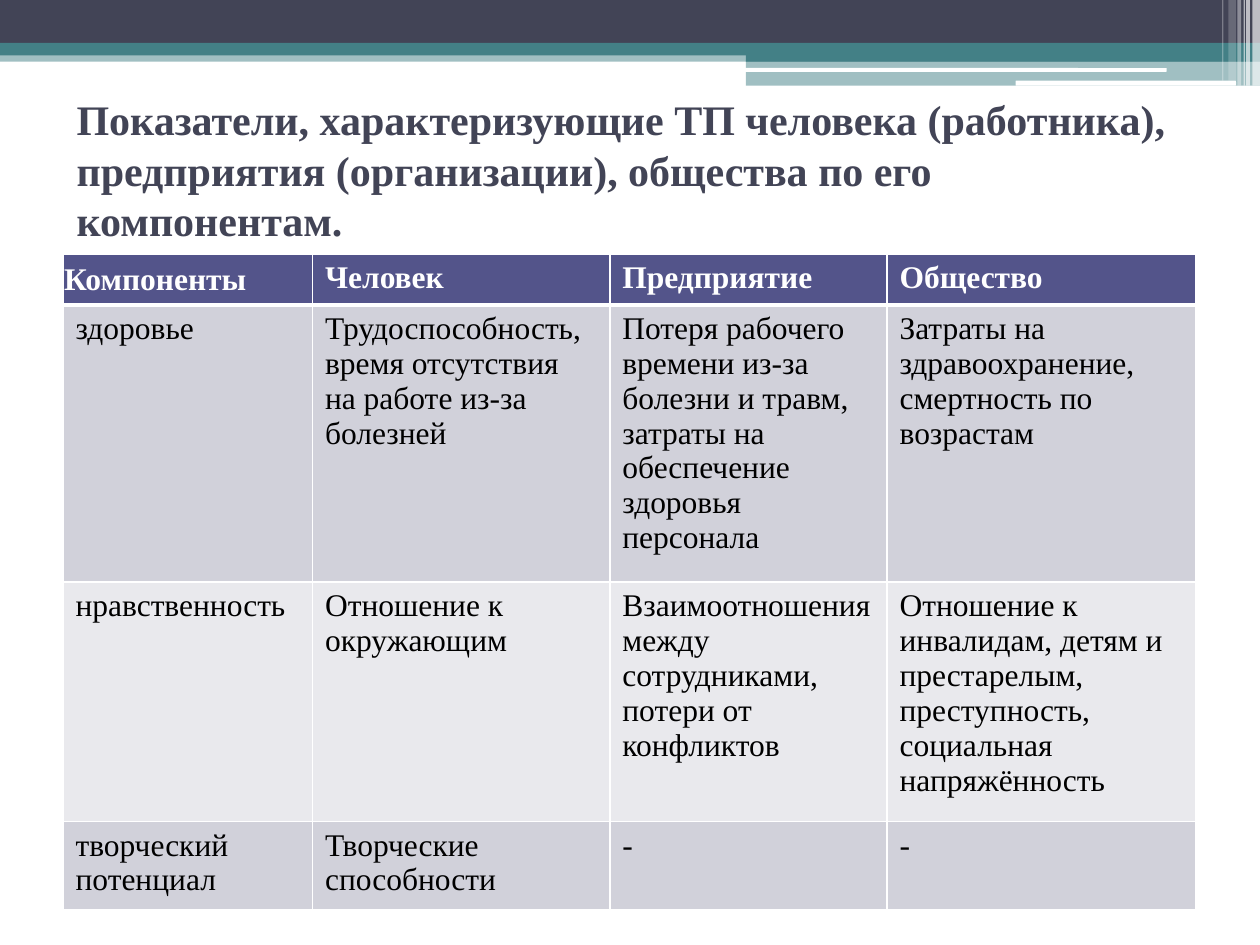
from lxml import etree
from pptx import Presentation
from pptx.dml.color import RGBColor
from pptx.enum.shapes import MSO_SHAPE
from pptx.enum.text import MSO_ANCHOR, PP_ALIGN
from pptx.oxml.ns import qn
from pptx.util import Inches, Pt

RECT, ROUND = MSO_SHAPE.RECTANGLE, MSO_SHAPE.ROUNDED_RECTANGLE
MIDDLE, JUSTIFY = MSO_ANCHOR.MIDDLE, PP_ALIGN.JUSTIFY
FONT = "Times New Roman"
DARK, TEAL, WHITE, BLACK, HEAD = "424456", "438086", "FFFFFF", "000000", "53548A"
BANDS = ["D1D1DA", "E9E9ED"]

TITLE = ("Показатели, характеризующие ТП человека (работника), "
         "предприятия (организации), общества по его компонентам.")
ROWS = [
    ["Компоненты", "Человек", "Предприятие", "Общество"],
    ["здоровье",
     "Трудоспособность, время отсутствия на работе из-за болезней",
     "Потеря рабочего времени из-за болезни и травм, затраты на обеспечение здоровья персонала",
     "Затраты на здравоохранение, смертность по возрастам"],
    ["нравственность",
     "Отношение к окружающим",
     "Взаимоотношения между сотрудниками, потери от конфликтов",
     "Отношение к инвалидам, детям и престарелым, преступность, социальная напряжённость"],
    ["творческий потенциал", "Творческие способности", "-", "-"],
]
COL_WIDTHS = [1.98, 2.36, 2.2, 2.45]
ROW_HEIGHTS = [0.37, 2.05, 1.81, 0.65]

BARS = [
    (RECT, 0, 0.4, 10, 0.09, TEAL, 50),
    (RECT, 0, 0, 10, 0.34, DARK, 100),
    (RECT, 0, 0.34, 10, 0.1, TEAL, 100),
    (RECT, 5.92, 0.39, 4.08, 0.1, TEAL, 100),
    (RECT, 5.92, 0.48, 4.08, 0.2, TEAL, 50),
    (ROUND, 5.91, 0.54, 3.35, 0.03, WHITE, 100),
    (ROUND, 8.06, 0.64, 1.75, 0.04, WHITE, 100),
]
STRIPES = [
    (9.94, 0.06, 0.68, 65),
    (9.89, 0.03, 0.68, 65),
    (9.87, 0.01, 0.68, 60),
    (9.82, 0.03, 0.68, 40),
    (9.75, 0.06, 0.64, 20),
    (9.7, 0.01, 0.64, 30),
]


def rgb(color):
    return RGBColor.from_string(color)


def add_bar(s, kind, x, y, w, h, color, opacity):
    sp = s.shapes.add_shape(kind, Inches(x), Inches(y), Inches(w), Inches(h))
    sp.shadow.inherit = False
    sp.line.fill.background()
    sp.fill.solid()
    sp.fill.fore_color.rgb = rgb(color)
    if opacity < 100:
        clr = sp.fill._xPr.find(qn("a:solidFill"))[0]
        etree.SubElement(clr, qn("a:alpha")).set("val", str(opacity * 1000))


def add_run(tf, text, size, color, bold):
    p = tf.paragraphs[0]
    r = p.add_run()
    r.text = text
    r.font.name = FONT
    r.font.size = Pt(size)
    r.font.bold = bold
    r.font.color.rgb = rgb(color)
    return p


def set_borders(cell, top, bottom):
    tc_pr = cell._tc.get_or_add_tcPr()
    sides = [("a:lnL", 1), ("a:lnR", 1), ("a:lnT", top), ("a:lnB", bottom)]
    for i, (tag, width) in enumerate(sides):
        ln = etree.Element(qn(tag), w=str(Pt(width)))
        fill = etree.SubElement(ln, qn("a:solidFill"))
        etree.SubElement(fill, qn("a:srgbClr")).set("val", WHITE)
        tc_pr.insert(i, ln)


def add_table(s):
    table = s.shapes.add_table(
        len(ROWS), len(COL_WIDTHS), Inches(0.5), Inches(2.02),
        Inches(sum(COL_WIDTHS)), Inches(sum(ROW_HEIGHTS))).table
    for col, width in zip(table.columns, COL_WIDTHS):
        col.width = Inches(width)
    for i, (texts, height) in enumerate(zip(ROWS, ROW_HEIGHTS)):
        table.rows[i].height = Inches(height)
        header = i == 0
        for j, text in enumerate(texts):
            cell = table.cell(i, j)
            cell.fill.solid()
            cell.fill.fore_color.rgb = rgb(HEAD if header else BANDS[(i - 1) % 2])
            set_borders(cell, 3 if i == 1 else 1, 3 if header else 1)
            add_run(cell.text_frame, text, 18, WHITE if header else BLACK, header)
    corner = table.cell(0, 0)
    corner.vertical_anchor = MIDDLE
    corner.margin_left = corner.margin_right = Inches(0.01)
    corner.margin_top = corner.margin_bottom = Inches(0.01)
    corner.text_frame.paragraphs[0].alignment = JUSTIFY


def main():
    prs = Presentation()
    prs.slide_width, prs.slide_height = Inches(10), Inches(7.5)
    s = prs.slides.add_slide(prs.slide_layouts[6])
    for bar in BARS:
        add_bar(s, *bar)
    for x, w, h, opacity in STRIPES:
        add_bar(s, RECT, x, 0, w, h, WHITE, opacity)
    tf = s.shapes.add_textbox(Inches(0.51), Inches(0.76), Inches(9), Inches(1.17)).text_frame
    tf.word_wrap = True
    tf.vertical_anchor = MIDDLE
    add_run(tf, TITLE, 24, DARK, True)
    add_table(s)
    prs.save("out.pptx")


if __name__ == "__main__":
    main()
